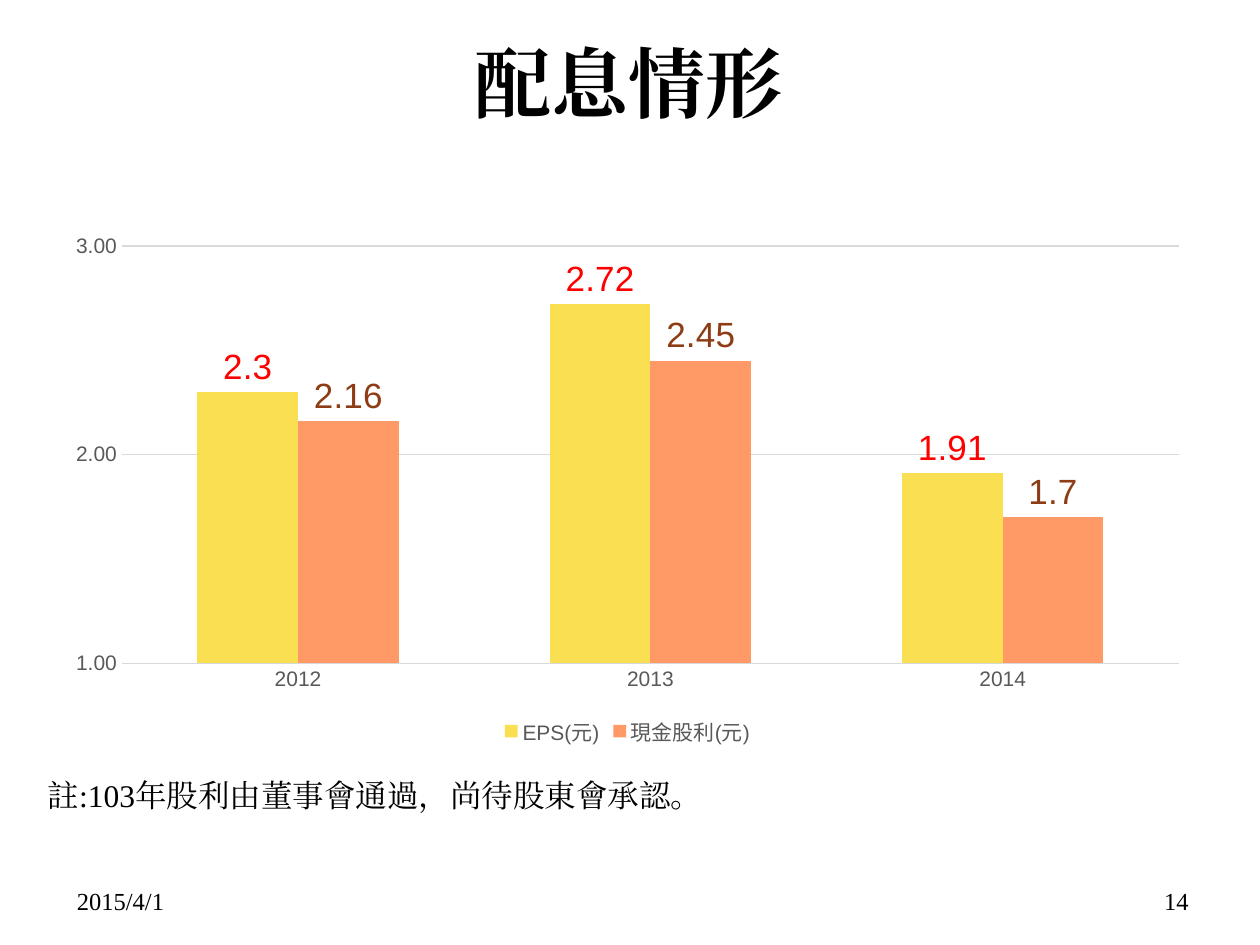
from dataclasses import dataclass
from typing import Any

from lxml import etree
from pptx import Presentation
from pptx.chart.data import CategoryChartData
from pptx.dml.color import RGBColor
from pptx.enum.chart import (XL_CHART_TYPE, XL_LABEL_POSITION,
                             XL_LEGEND_POSITION, XL_TICK_MARK)
from pptx.enum.text import MSO_ANCHOR, PP_ALIGN
from pptx.oxml.ns import qn
from pptx.util import Cm, Pt

BLACK = RGBColor(0, 0, 0)
GREY = RGBColor(0x59, 0x59, 0x59)
PALE = RGBColor(0xD9, 0xD9, 0xD9)
GOLD = RGBColor(0xFB, 0xDF, 0x53)
PEACH = RGBColor(0xFF, 0x99, 0x66)
RED = RGBColor(0xFF, 0, 0)
BROWN = RGBColor(0x8D, 0x3C, 0x15)

LEFT, MID, RIGHT = PP_ALIGN.LEFT, PP_ALIGN.CENTER, PP_ALIGN.RIGHT
NO_TICK = XL_TICK_MARK.NONE
COLUMN = XL_CHART_TYPE.COLUMN_CLUSTERED
SERIF, SANS = "Times New Roman", "Arial"


@dataclass
class Note:
    text: str
    box: tuple[float, float, float, float]
    size: int
    align: Any = LEFT
    wrap: bool = True


@dataclass
class Bar:
    name: str
    vals: tuple[float, ...]
    fill: RGBColor
    ink: RGBColor


YEARS = ("2012", "2013", "2014")
BARS = (
    Bar("EPS(元)", (2.3, 2.72, 1.91), GOLD, RED),
    Bar("現金股利(元)", (2.16, 2.45, 1.7), PEACH, BROWN),
)
TITLE = Note("配息情形", (2.29, 0.33, 20.75, 2.62), 44, MID)
NOTES = (
    Note("註:103年股利由董事會通過，尚待股東會承認。",
         (0.71, 15.52, 14.25, 1.02), 18, wrap=False),
    Note("2015/4/1", (1.3, 17.73, 5.92, 1.32), 14),
    Note("14", (18.29, 17.73, 5.92, 1.32), 14, RIGHT),
)


def style(item: Any, form: dict[str, Any]) -> None:
    for key, val in form.items():
        setattr(item, key, val)


def ink(font: Any, size: int, color: RGBColor, name: str = SANS) -> None:
    style(font, {"size": Pt(size), "name": name})
    font.color.rgb = color


def write(shape: Any, note: Note, bold: bool = False) -> None:
    left, top, width, height = map(Cm, note.box)
    style(shape, {"left": left, "top": top, "width": width, "height": height})
    frame = shape.text_frame
    frame.word_wrap = note.wrap
    frame.text = note.text
    para = frame.paragraphs[0]
    para.alignment = note.align
    run = para.runs[0]
    ink(run.font, note.size, BLACK, SERIF)
    run.font.bold = bold
    # East Asian glyphs share the serif face
    face = etree.SubElement(run.font._element, qn("a:ea"))
    face.set("typeface", SERIF)


def plot(slide: Any) -> None:
    data = CategoryChartData()
    data.categories = YEARS
    for bar in BARS:
        data.add_series(bar.name, bar.vals)
    area = map(Cm, (1.07, 4.52, 23.16, 10.64))
    chart = slide.shapes.add_chart(COLUMN, *area, data).chart
    ink(chart.font, 10, BLACK)
    style(chart, {"has_title": False, "has_legend": True})
    style(chart.legend, {"position": XL_LEGEND_POSITION.BOTTOM,
                         "include_in_layout": False})
    ink(chart.legend.font, 12, GREY)

    # Axes
    for axis in (chart.category_axis, chart.value_axis):
        style(axis, {"major_tick_mark": NO_TICK, "minor_tick_mark": NO_TICK})
        axis.format.line.fill.background()
        ink(axis.tick_labels.font, 12, GREY)
    scale = chart.value_axis
    style(scale, {"minimum_scale": 1, "maximum_scale": 3, "major_unit": 1,
                  "has_major_gridlines": True})
    style(scale.tick_labels, {"number_format": "0.00",
                              "number_format_is_linked": False})
    grid = scale.major_gridlines.format.line
    grid.color.rgb, grid.width = PALE, Pt(0.75)

    # Columns and their values
    body = chart.plots[0]
    style(body, {"gap_width": 150, "overlap": 0, "vary_by_categories": False})
    for bar, col in zip(BARS, body.series):
        col.format.fill.solid()
        col.format.fill.fore_color.rgb = bar.fill
        tags = col.data_labels
        style(tags, {"show_value": True,
                     "position": XL_LABEL_POSITION.OUTSIDE_END})
        ink(tags.font, 20, bar.ink)


def main() -> None:
    deck = Presentation()
    style(deck, {"slide_width": Cm(25.4), "slide_height": Cm(19.05)})
    slide = deck.slides.add_slide(deck.slide_layouts[5])

    # Title
    head = slide.shapes.title
    write(head, TITLE, bold=True)
    head.text_frame.vertical_anchor = MSO_ANCHOR.MIDDLE

    # Chart, remark and footer
    plot(slide)
    for note in NOTES:
        write(slide.shapes.add_textbox(0, 0, 0, 0), note)
    deck.save("out.pptx")


if __name__ == "__main__":
    main()
